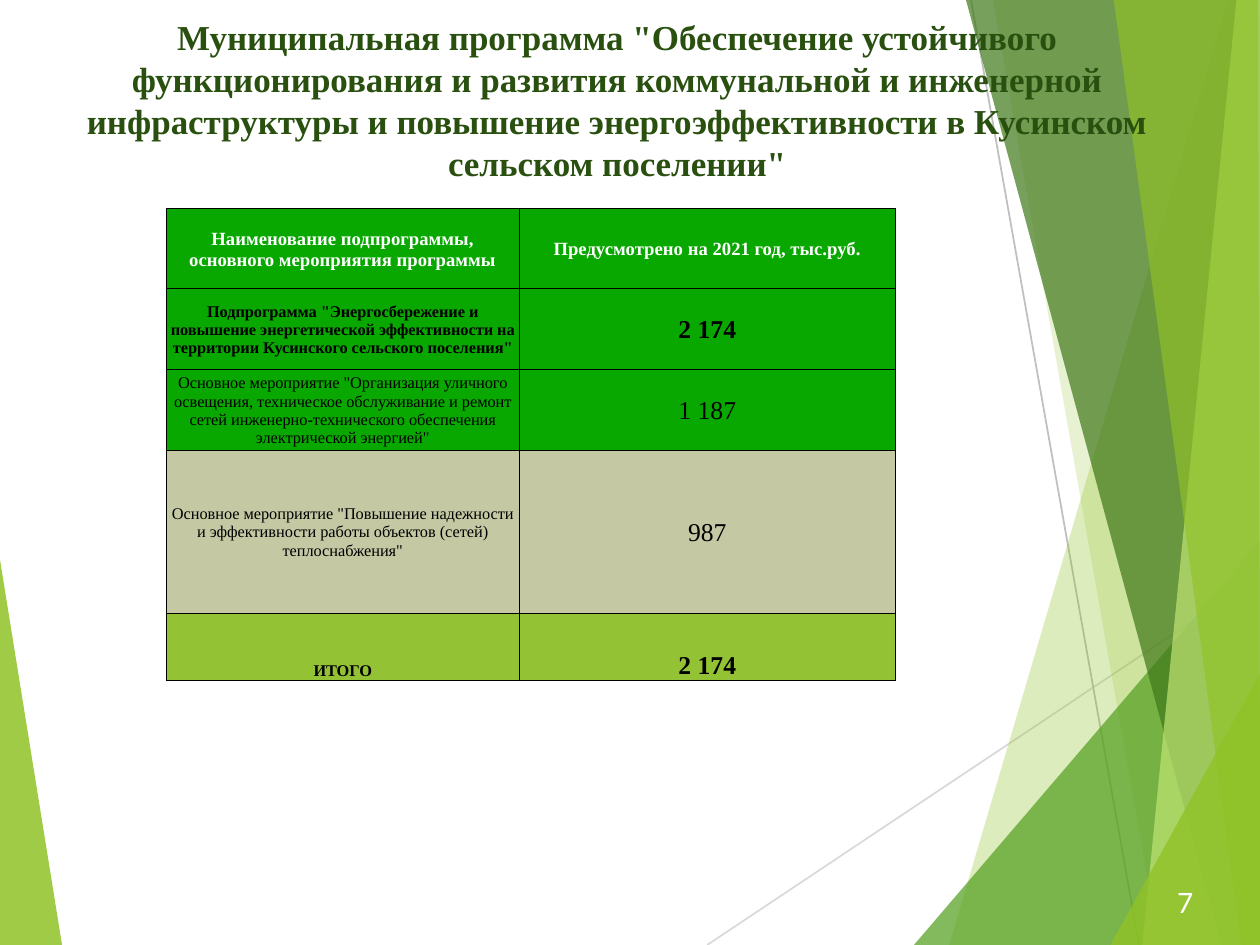
from lxml import etree
from pptx import Presentation
from pptx.dml.color import RGBColor
from pptx.enum.text import MSO_ANCHOR as Anchor, MSO_AUTO_SIZE as AutoSize, PP_ALIGN as Align
from pptx.oxml import parse_xml
from pptx.oxml.ns import nsdecls, qn
from pptx.util import Inches, Pt

WIDTH = 7.5
HEIGHT = WIDTH * 3 / 4
SERIF = "Times New Roman"


def rgb(color):
    return RGBColor.from_string(color)


def write(frame, text, size, color, font=SERIF, bold=False):
    """Fill a text frame with one centred, formatted paragraph."""
    frame.text = text
    frame.word_wrap = True
    paragraph = frame.paragraphs[0]
    paragraph.alignment = Align.CENTER
    style = paragraph.runs[0].font
    style.name, style.size, style.bold = font, Pt(size), bold
    style.color.rgb = rgb(color)


prs = Presentation()
prs.slide_width, prs.slide_height = Inches(WIDTH), Inches(HEIGHT)
slide = prs.slides.add_slide(prs.slide_layouts[5])
shapes = slide.shapes

# Thin lines behind the facets: start, end, colour
for start, end, color in [
    ((4.21, HEIGHT), (WIDTH, 3.43), "D9D9D9"),
    ((5.78, 0), (6.78, HEIGHT), "BFBFBF"),
]:
    ray = shapes.add_connector(1, *map(Inches, start + end))
    ray.line.color.rgb = rgb(color)
    ray.line.width = Pt(0.75)
    etree.SubElement(ray._element.spPr, qn("a:effectLst"))

# Translucent facets: colour, opacity in percent, corners
facets = [
    ("90C226", 85, [(0, 3.33), (0.37, HEIGHT), (0, HEIGHT)]),
    ("90C226", 30, [(7.31, 0), (5.65, HEIGHT), (WIDTH, HEIGHT), (WIDTH, 0)]),
    ("90C226", 20, [(5.91, 0), (6.9, HEIGHT), (WIDTH, HEIGHT), (WIDTH, 0)]),
    ("54A021", 72, [(5.44, HEIGHT), (WIDTH, 3.22), (WIDTH, HEIGHT)]),
    ("3F7819", 70, [(5.75, 0), (7.27, HEIGHT), (WIDTH, HEIGHT), (WIDTH, 0)]),
    ("C0E474", 70, [(7.36, 0), (6.8, HEIGHT), (WIDTH, HEIGHT), (WIDTH, 0)]),
    ("90C226", 65, [(6.63, 0), (7.39, HEIGHT), (WIDTH, HEIGHT), (7.49, 0)]),
    ("90C226", 80, [(6.61, HEIGHT), (WIDTH, 4.01), (WIDTH, HEIGHT)]),
]
for color, opacity, corners in facets:
    outline = [(Inches(x), Inches(y)) for x, y in corners]
    builder = shapes.build_freeform(*outline[0])
    builder.add_line_segments(outline[1:], close=True)
    facet = builder.convert_to_shape()
    facet.shadow.inherit = False
    facet.fill.solid()
    facet.fill.fore_color.rgb = rgb(color)
    facet.line.fill.background()
    tint = facet._element.spPr.find(f"{qn('a:solidFill')}/{qn('a:srgbClr')}")
    etree.SubElement(tint, qn("a:alpha"), val=str(opacity * 1000))

# The title stands in front of the facets
title = shapes.title
shapes._spTree.append(title._element)
title.left, title.top, title.width, title.height = map(Inches, (0.13, 0.69, 7.09, 0.44))
heading = title.text_frame
write(
    heading,
    'Муниципальная программа "Обеспечение устойчивого функционирования и развития '
    "коммунальной и инженерной инфраструктуры и повышение энергоэффективности "
    'в Кусинском сельском поселении"',
    15, "2A5010", bold=True,
)
heading.auto_size = AutoSize.NONE
heading.vertical_anchor = Anchor.BOTTOM
heading.margin_left = heading.margin_right = Inches(0.07)
heading.margin_top = heading.margin_bottom = Inches(0.04)

page_number = shapes.add_textbox(*map(Inches, (6.82, 5.25, 0.47, 0.24))).text_frame
write(page_number, "7", 12, "FFFFFF", font="Lato")
page_number.vertical_anchor = Anchor.MIDDLE

# Budget rows: height, fill, text colour, bold, sizes, anchor, texts
GREEN = "08A800"
budget = [
    (0.48, GREEN, "FFFFFF", True, (8, 8), Anchor.MIDDLE,
     ("Наименование подпрограммы, основного мероприятия программы",
      "Предусмотрено на 2021 год, тыс.руб.")),
    (0.48, GREEN, "000000", True, (7, 11), Anchor.MIDDLE,
     ('Подпрограмма "Энергосбережение и повышение энергетической эффективности '
      'на территории Кусинского сельского поселения"', "2 174")),
    (0.48, GREEN, "000000", False, (7, 11), Anchor.MIDDLE,
     ('Основное мероприятие "Организация уличного освещения, техническое обслуживание '
      'и ремонт сетей инженерно-технического обеспечения электрической энергией"', "1 187")),
    (0.97, "C4C9A4", "000000", False, (7, 11), Anchor.MIDDLE,
     ('Основное мероприятие "Повышение надежности и эффективности работы '
      'объектов (сетей) теплоснабжения"', "987")),
    (0.4, "93C234", "000000", True, (7, 11), Anchor.BOTTOM, ("ИТОГО", "2 174")),
]
table = shapes.add_table(len(budget), 2, *map(Inches, (0.99, 1.24, 4.34, 2.81))).table
table.first_row = table.horz_banding = False
for column, width in zip(table.columns, (2.1, 2.24)):
    column.width = Inches(width)

for r, (height, fill, color, bold, sizes, anchor, texts) in enumerate(budget):
    table.rows[r].height = Inches(height)
    for c, (text, size) in enumerate(zip(texts, sizes)):
        cell = table.cell(r, c)
        write(cell.text_frame, text, size, color, bold=bold)
        cell.vertical_anchor = anchor
        cell.margin_left = cell.margin_right = cell.margin_top = Inches(0.01)
        cell.margin_bottom = 0
        cell.fill.solid()
        cell.fill.fore_color.rgb = rgb(fill)
        properties = cell._tc.get_or_add_tcPr()
        for position, side in enumerate(("lnL", "lnR", "lnT", "lnB")):
            properties.insert(position, parse_xml(
                f'<a:{side} {nsdecls("a")} w="{Pt(0.5)}"><a:solidFill>'
                f'<a:srgbClr val="000000"/></a:solidFill></a:{side}>'))

prs.save("out.pptx")
